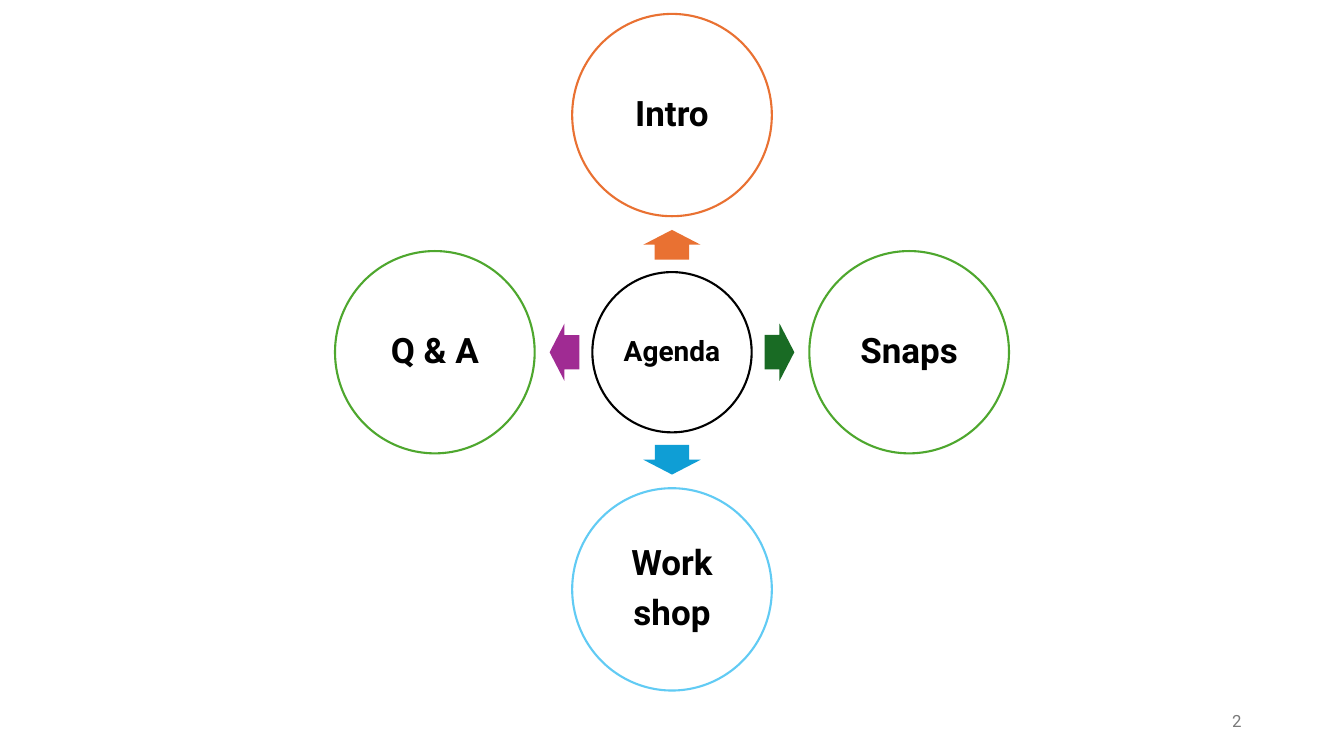
from pptx import Presentation
from pptx.dml.color import RGBColor
from pptx.enum.shapes import MSO_SHAPE
from pptx.enum.text import MSO_ANCHOR, PP_ALIGN
from pptx.util import Pt

COLORS = {
    "white": "FFFFFF",
    "black": "000000",
    "gray": "797979",
    "orange": "E97132",
    "dark_green": "196B24",
    "green": "4EA72E",
    "blue": "0F9ED5",
    "light_blue": "61CBF4",
    "purple": "A02B93",
}
FONT = "Roboto"
CENTER_X, CENTER_Y = 480, 251.6
TOPIC_DISTANCE = 169.4
ARROW_DISTANCE = 76.8
TOPIC_SIZE = (142.6, 144.5)
HUB_SIZE = (113.8, 114.5)
ARROW_SIZE = (21.2, 41)

TOPICS = [
    (["Intro"], 0, -1, 270, "orange", "orange"),
    (["Snaps"], 1, 0, 0, "dark_green", "green"),
    (["Work", "shop"], 0, 1, 90, "blue", "light_blue"),
    (["Q & A"], -1, 0, 180, "purple", "green"),
]


def color(name):
    return RGBColor.from_string(COLORS[name])


def style_paragraph(paragraph, text, size, color_name, alignment, bold=False):
    paragraph.text = text
    paragraph.alignment = alignment
    paragraph.font.name = FONT
    paragraph.font.size = Pt(size)
    paragraph.font.bold = bold
    paragraph.font.color.rgb = color(color_name)


def add_centered_shape(slide, kind, x, y, size, fill):
    width, height = size
    shape = slide.shapes.add_shape(
        kind, Pt(x - width / 2), Pt(y - height / 2), Pt(width), Pt(height))
    shape.shadow.inherit = False
    shape.fill.solid()
    shape.fill.fore_color.rgb = color(fill)
    return shape


def add_circle(slide, lines, x, y, size, outline, font_size):
    circle = add_centered_shape(slide, MSO_SHAPE.OVAL, x, y, size, "white")
    circle.line.color.rgb = color(outline)
    circle.line.width = Pt(1.5)
    frame = circle.text_frame
    frame.word_wrap = True
    frame.vertical_anchor = MSO_ANCHOR.MIDDLE
    frame.margin_left = frame.margin_right = Pt(2)
    frame.margin_top = frame.margin_bottom = Pt(2)
    for index, line in enumerate(lines):
        paragraph = frame.add_paragraph() if index else frame.paragraphs[0]
        style_paragraph(paragraph, line, font_size, "black", PP_ALIGN.CENTER, True)
        paragraph.line_spacing = 0.9
        paragraph.space_after = Pt(font_size * 0.35)


def add_arrow(slide, x, y, rotation, fill):
    arrow = add_centered_shape(slide, MSO_SHAPE.RIGHT_ARROW, x, y, ARROW_SIZE, fill)
    arrow.line.fill.background()
    arrow.adjustments[0] = 0.6
    arrow.adjustments[1] = 0.5
    arrow.rotation = rotation


def add_page_number(slide, number):
    box = slide.shapes.add_textbox(Pt(678), Pt(500.5), Pt(216), Pt(28.8))
    frame = box.text_frame
    frame.word_wrap = True
    frame.vertical_anchor = MSO_ANCHOR.MIDDLE
    style_paragraph(frame.paragraphs[0], number, 12, "gray", PP_ALIGN.RIGHT)


def main():
    presentation = Presentation()
    presentation.slide_width = Pt(960)
    presentation.slide_height = Pt(540)
    slide = presentation.slides.add_slide(presentation.slide_layouts[6])

    add_circle(slide, ["Agenda"], CENTER_X, CENTER_Y, HUB_SIZE, "black", 20)
    for lines, step_x, step_y, rotation, fill, outline in TOPICS:
        add_arrow(slide, CENTER_X + step_x * ARROW_DISTANCE,
                  CENTER_Y + step_y * ARROW_DISTANCE, rotation, fill)
        add_circle(slide, lines, CENTER_X + step_x * TOPIC_DISTANCE,
                   CENTER_Y + step_y * TOPIC_DISTANCE, TOPIC_SIZE, outline, 25)
    add_page_number(slide, "2")

    presentation.save("out.pptx")


if __name__ == "__main__":
    main()
